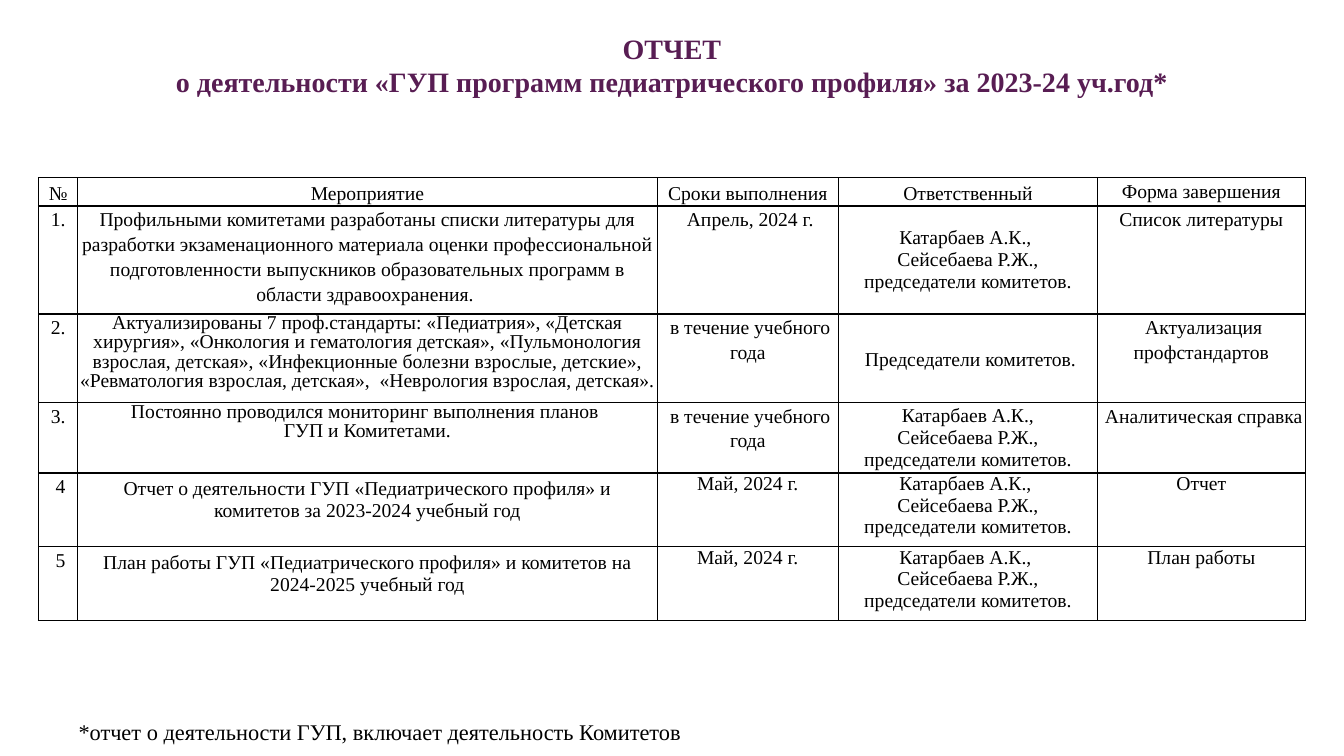
from lxml import etree
from pptx import Presentation
from pptx.dml.color import RGBColor
from pptx.enum.text import MSO_ANCHOR, MSO_AUTO_SIZE, PP_ALIGN
from pptx.oxml.ns import qn
from pptx.util import Cm, Pt

CENTER = PP_ALIGN.CENTER
LEFT = PP_ALIGN.LEFT
TOP = MSO_ANCHOR.TOP
MIDDLE = MSO_ANCHOR.MIDDLE
NO_AUTOSIZE = MSO_AUTO_SIZE.NONE

FONT = "Times New Roman"
BLACK = "000000"
PURPLE = "581D53"

TITLE = "ОТЧЕТ\nо деятельности «ГУП программ педиатрического профиля» за 2023-24 уч.год*"
FOOTNOTE = "*отчет о деятельности ГУП, включает деятельность Комитетов"

PEOPLE = "Катарбаев А.К., \nСейсебаева Р.Ж., председатели комитетов."
COLUMN_WIDTHS = [0.99, 14.6, 4.57, 6.53, 5.23]
ROW_HEIGHTS = [0.71, 2.72, 2.23, 1.78, 1.86, 1.86]
ROWS = [
    ["№", "Мероприятие", "Сроки выполнения", "Ответственный", "Форма завершения"],
    ["1.",
     "Профильными комитетами разработаны списки литературы для разработки "
     "экзаменационного материала оценки профессиональной подготовленности "
     "выпускников образовательных программ в области здравоохранения. ",
     " Апрель, 2024 г.", PEOPLE, "Список литературы"],
    ["2.",
     "Актуализированы 7 проф.стандарты: «Педиатрия», «Детская хирургия», "
     "«Онкология и гематология детская», «Пульмонология взрослая, детская», "
     "«Инфекционные болезни взрослые, детские», «Ревматология взрослая, детская»,  "
     "«Неврология взрослая, детская».",
     " в течение учебного года", " Председатели комитетов.",
     " Актуализация профстандартов"],
    ["3.",
     "Постоянно проводился мониторинг выполнения планов \nГУП и Комитетами.",
     " в течение учебного года", " " + PEOPLE, " Аналитическая справка"],
    [" 4",
     "Отчет о деятельности ГУП «Педиатрического профиля» и комитетов "
     "за 2023-2024 учебный год",
     "Май, 2024 г.", PEOPLE, "Отчет"],
    [" 5",
     "План работы ГУП «Педиатрического профиля» и комитетов "
     "на 2024-2025 учебный год",
     "Май, 2024 г.", PEOPLE, "План работы"],
]


def color(value):
    return RGBColor.from_string(value)


def write_text(text_frame, text, size, text_color=BLACK, bold=False,
               alignment=CENTER, line_spacing=1.0, space_after=0):
    text_frame.text = text
    for paragraph in text_frame.paragraphs:
        paragraph.alignment = alignment
        paragraph.line_spacing = line_spacing
        paragraph.space_after = Pt(space_after)
        font = paragraph.font
        font.name, font.size, font.bold = FONT, Pt(size), bold
        font.color.rgb = color(text_color)


def add_borders(cell):
    properties = cell._tc.get_or_add_tcPr()
    for position, side in enumerate(("lnL", "lnR", "lnT", "lnB")):
        line = etree.Element(qn("a:" + side), w=str(Pt(1)))
        fill = etree.SubElement(line, qn("a:solidFill"))
        etree.SubElement(fill, qn("a:srgbClr"), val=BLACK)
        properties.insert(position, line)


def cell_spacing(row, column, text):
    """Line spacing and space after, in lines and points."""
    if column == 1 and row in (2, 3):
        return 0.9, 0
    if PEOPLE in text or (row >= 4 and column > 0):
        return 1.0, 0
    return 1.15, 10


def cell_margins(row, column):
    """Side and vertical margins in centimetres."""
    if row < 4 or column == 0:
        return 0.05, 0
    return (0.25, 0.13) if column == 1 else (0.17, 0)


def place_title(slide, left, top, width, height):
    title = slide.shapes.title
    title.left, title.top, title.width, title.height = left, top, width, height
    title.text_frame.auto_size = NO_AUTOSIZE
    title.text_frame.vertical_anchor = TOP
    write_text(title.text_frame, TITLE, 20, PURPLE, bold=True)


def place_report_table(slide, left, top, width, height):
    table = slide.shapes.add_table(
        len(ROWS), len(COLUMN_WIDTHS), left, top, width, height).table
    table.first_row = table.horz_banding = False
    # Share the box out among columns and rows
    for column, share in zip(table.columns, COLUMN_WIDTHS):
        column.width = int(width * share / sum(COLUMN_WIDTHS))
    for row, share in zip(table.rows, ROW_HEIGHTS):
        row.height = int(height * share / sum(ROW_HEIGHTS))
    # Fill the cells
    for row, texts in enumerate(ROWS):
        for column, text in enumerate(texts):
            cell = table.cell(row, column)
            side, vertical = cell_margins(row, column)
            cell.margin_left = cell.margin_right = Cm(side)
            cell.margin_top = cell.margin_bottom = Cm(vertical)
            centred = (row == 0 and column < 4) or (row in (1, 2, 3) and column == 3)
            cell.vertical_anchor = MIDDLE if centred else TOP
            cell.fill.background()
            add_borders(cell)
            line_spacing, space_after = cell_spacing(row, column, text)
            write_text(cell.text_frame, text, 14,
                       line_spacing=line_spacing, space_after=space_after)


def place_footnote(slide, left, top, width, height):
    footnote = slide.shapes.add_textbox(left, top, width, height)
    footnote.text_frame.word_wrap = False
    write_text(footnote.text_frame, FOOTNOTE, 16, alignment=LEFT)


def main():
    presentation = Presentation()
    presentation.slide_width = Cm(33.87)
    presentation.slide_height = Cm(19.05)
    slide = presentation.slides.add_slide(presentation.slide_layouts[5])
    place_title(slide, Cm(0), Cm(0.66), presentation.slide_width, Cm(1.96))
    place_report_table(slide, Cm(0.97), Cm(4.48), Cm(31.92), Cm(11.16))
    place_footnote(slide, Cm(1.73), Cm(17.98), Cm(15.8), Cm(0.94))
    presentation.save("out.pptx")


if __name__ == "__main__":
    main()
